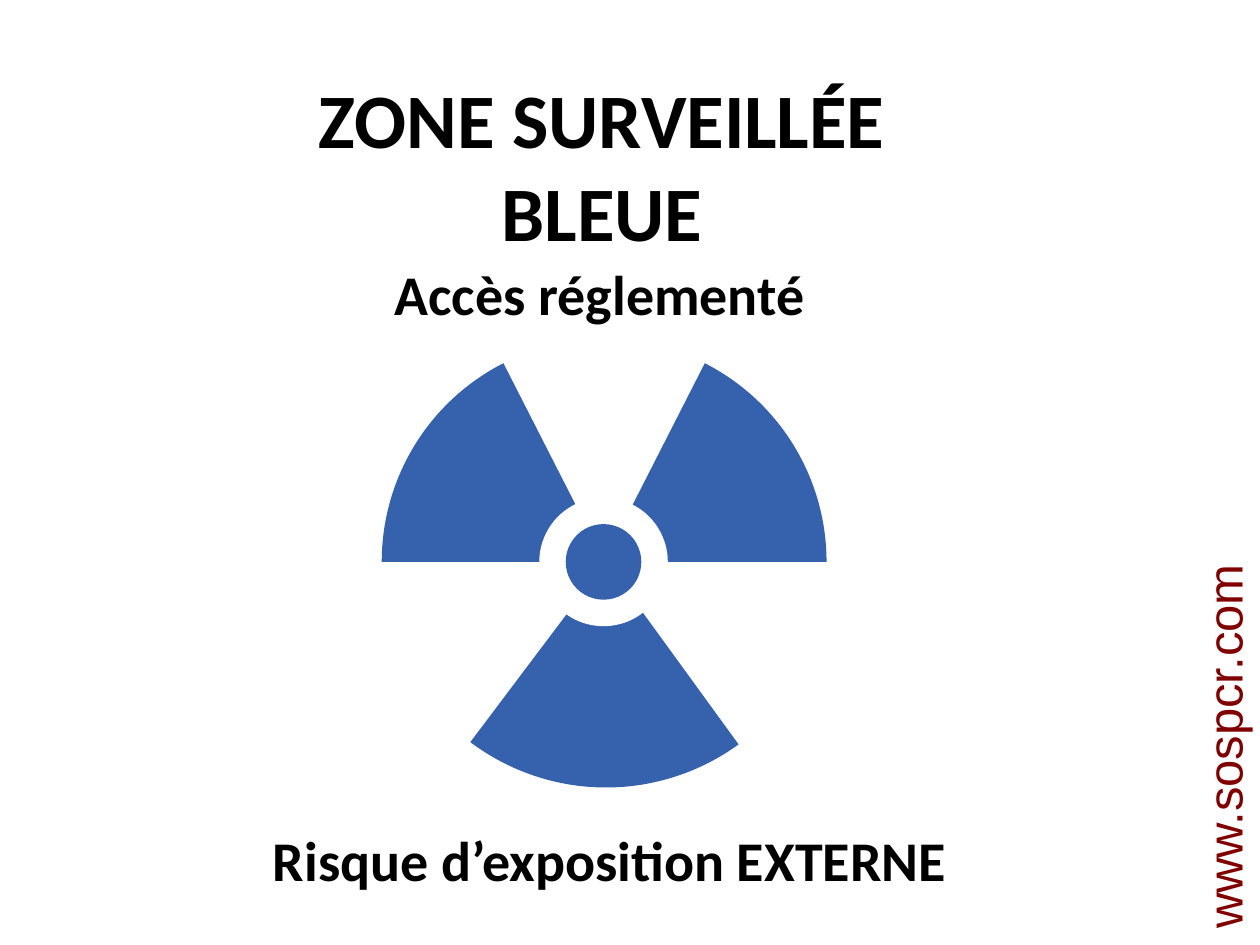
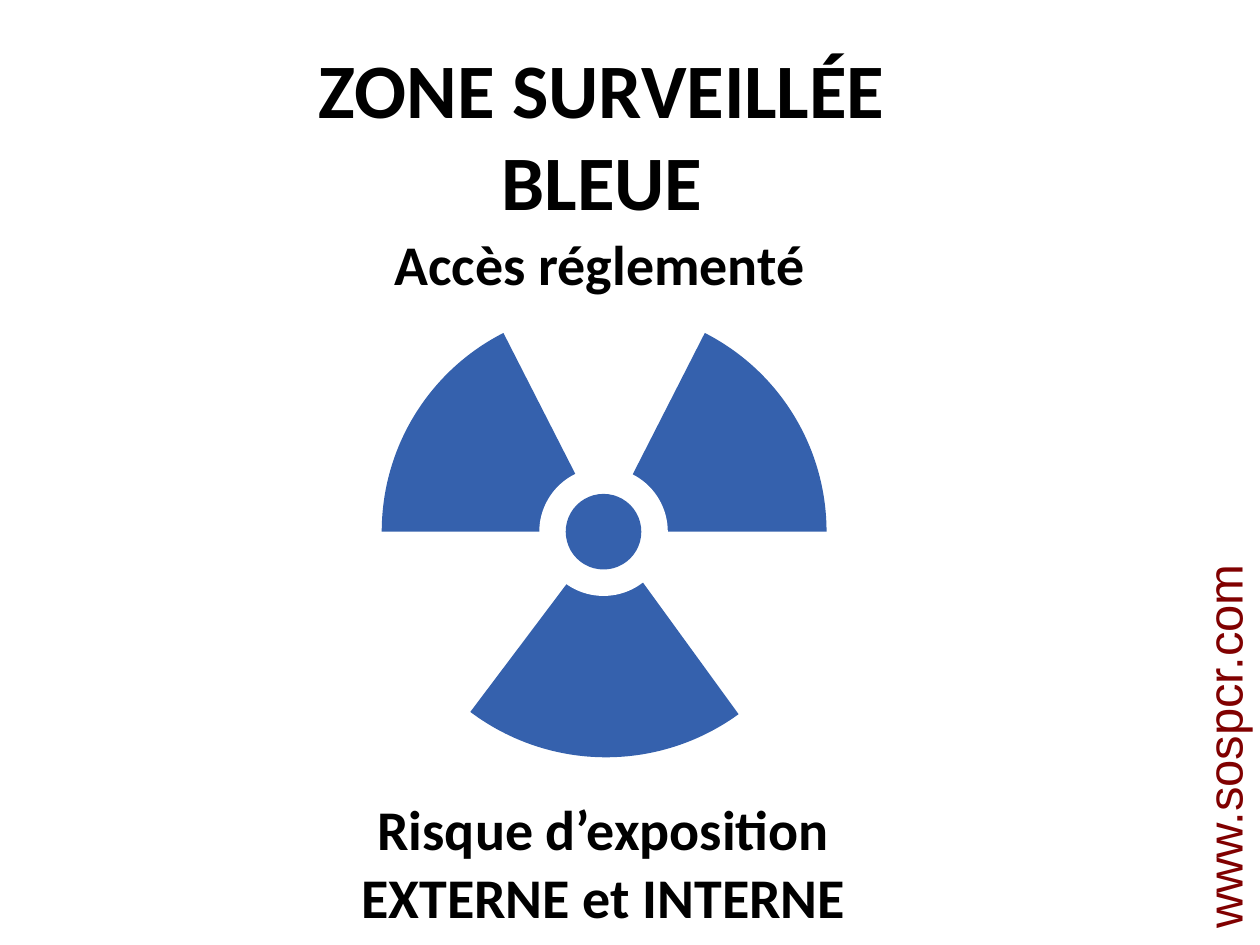
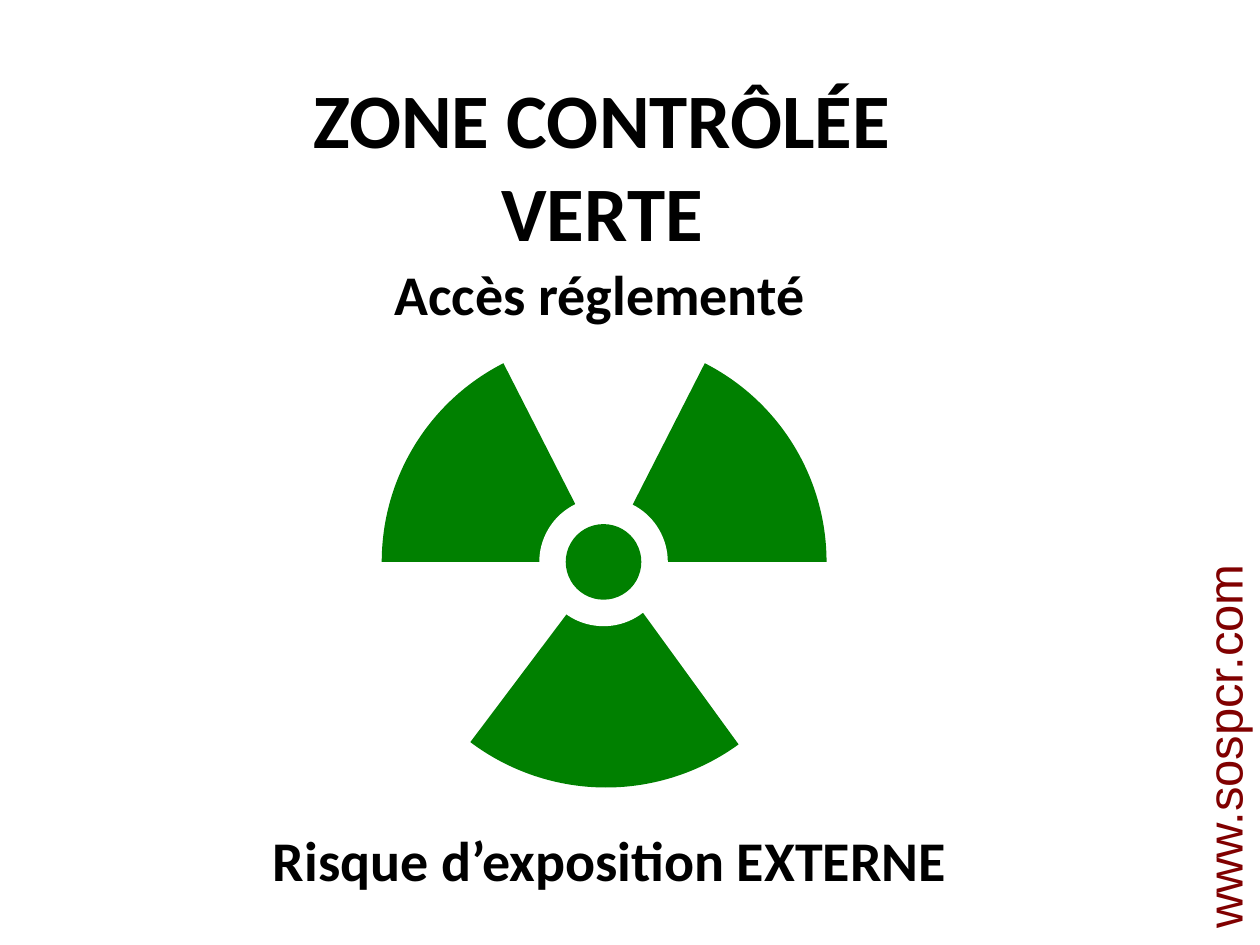
from dataclasses import dataclass
from math import cos, pi, radians, sin, tan

from lxml.etree import SubElement
from pptx import Presentation
from pptx.dml.color import RGBColor
from pptx.enum.shapes import MSO_SHAPE
from pptx.enum.text import MSO_ANCHOR, MSO_AUTO_SIZE, PP_ALIGN
from pptx.oxml.ns import qn
from pptx.util import Inches, Pt


@dataclass(frozen=True)
class Theme:
    blue: RGBColor = RGBColor(0x35, 0x61, 0xAD)
    green: RGBColor = RGBColor(0x00, 0x80, 0x00)
    white: RGBColor = RGBColor(0xFF, 0xFF, 0xFF)
    black: RGBColor = RGBColor(0x00, 0x00, 0x00)
    maroon: RGBColor = RGBColor(0x80, 0x00, 0x00)
    sign_font: str = "Calibri"
    website_font: str = "Arial"
    title_size: int = 44
    caption_size: int = 32
    website_size: int = 28


THEME = Theme()
WEBSITE = "www.sospcr.com"
ACCESS = "Accès réglementé"

# "rise" lifts the whole sign to make room for a second risk line.
SIGNS = [
    {"title": "ZONE SURVEILLÉE\nBLEUE", "color": THEME.blue, "rise": 0,
     "risk": "Risque d’exposition EXTERNE", "risk_box": (2.04, 6.5, 5.6, 0.64)},
    {"title": "ZONE SURVEILLÉE\nBLEUE", "color": THEME.blue, "rise": 0.24,
     "risk": "Risque d’exposition\nEXTERNE et INTERNE", "risk_box": (2.7, 6.5, 4.18, 1.18)},
    {"title": "ZONE CONTRÔLÉE\nVERTE", "color": THEME.green, "rise": 0,
     "risk": "Risque d’exposition EXTERNE", "risk_box": (2.04, 6.5, 5.6, 0.64)},
]

# Trefoil blades: apex x, radius, angles where the arc starts, is split and ends.
BLADES = [(4.8, 1.77, (180, 243)), (4.81, 1.79, (54, 90, 127)), (4.79, 1.77, (297, 360))]
HUB_X, HUB_Y = 4.79, 4.46
RING_RADIUS, HUB_RADIUS = 0.51, 0.3
UNITS_PER_INCH = 1000


def format_text(text_frame, text, size, font_name, color, bold=True):
    text_frame.text = text
    for paragraph in text_frame.paragraphs:
        paragraph.alignment = PP_ALIGN.CENTER
        for run in paragraph.runs:
            run.font.size = Pt(size)
            run.font.name = font_name
            run.font.bold = bold
            run.font.color.rgb = color


def add_label(slide, text, box, size=THEME.caption_size, font_name=THEME.sign_font,
              color=THEME.black, bold=True):
    label = slide.shapes.add_textbox(*map(Inches, box))
    label.text_frame.word_wrap = False
    label.text_frame.auto_size = MSO_AUTO_SIZE.SHAPE_TO_FIT_TEXT
    format_text(label.text_frame, text, size, font_name, color, bold)
    return label


def set_title(slide, text, top):
    title = slide.shapes.title
    title.left, title.top, title.width, title.height = map(Inches, (1.38, top, 6.8, 1.58))
    title.text_frame.word_wrap = True
    title.text_frame.auto_size = MSO_AUTO_SIZE.NONE
    title.text_frame.vertical_anchor = MSO_ANCHOR.TOP
    format_text(title.text_frame, text, THEME.title_size, THEME.sign_font, THEME.black)


def paint(shape, color):
    shape.shadow.inherit = False
    shape.fill.solid()
    shape.fill.fore_color.rgb = color
    shape.line.fill.background()


def arc_points(center_x, center_y, radius, angles):
    """Return the arc's start, then two control points and an end for each Bézier piece."""
    def point(angle, tangent=0):
        return (UNITS_PER_INCH * (center_x + radius * (cos(angle) - tangent * sin(angle))),
                UNITS_PER_INCH * (center_y + radius * (sin(angle) + tangent * cos(angle))))

    turns = [radians(angle) for angle in angles]
    points = [point(turns[0])]
    for start, end in zip(turns, turns[1:]):
        handle = 4 / 3 * tan((end - start) / 4)
        points += [point(start, handle), point(end, -handle), point(end)]
    return points


def curve_lines(shape):
    """Turn every three line segments after the first into one cubic curve."""
    lines = list(shape.element.iter(qn("a:lnTo")))[1:]
    for first in range(0, len(lines) - 2, 3):
        piece = lines[first:first + 3]
        curve = SubElement(piece[0].getparent(), qn("a:cubicBezTo"))
        piece[0].addprevious(curve)
        for line in piece:
            curve.append(line[0])
            line.getparent().remove(line)


def add_blade(shapes, apex_x, apex_y, radius, angles, color):
    builder = shapes.build_freeform(UNITS_PER_INCH * apex_x, UNITS_PER_INCH * apex_y,
                                    scale=Inches(1) / UNITS_PER_INCH)
    builder.add_line_segments(arc_points(apex_x, apex_y, radius, angles), close=True)
    blade = builder.convert_to_shape()
    curve_lines(blade)
    paint(blade, color)


def add_trefoil(slide, color, rise):
    center_y = HUB_Y - rise
    blades = slide.shapes.add_group_shape().shapes
    for apex_x, radius, angles in BLADES:
        add_blade(blades, apex_x, center_y, radius, angles, color)
    for radius, fill in ((RING_RADIUS, THEME.white), (HUB_RADIUS, color)):
        disc = slide.shapes.add_shape(MSO_SHAPE.OVAL, Inches(HUB_X - radius),
                                      Inches(center_y - radius),
                                      Inches(2 * radius), Inches(2 * radius))
        paint(disc, fill)


def add_sign(presentation, sign):
    slide = presentation.slides.add_slide(presentation.slide_layouts.get_by_name("Title Only"))
    rise = sign["rise"]
    set_title(slide, sign["title"], 0.52 - rise)
    add_trefoil(slide, sign["color"], rise)
    add_label(slide, ACCESS, (3.01, 2.01 - rise, 3.5, 0.64))
    left, top, width, height = sign["risk_box"]
    add_label(slide, sign["risk"], (left, top - rise, width, height))
    return slide


def add_website_to_master(presentation, slide):
    """Build the vertical address on a slide, then move it to the master all slides share."""
    website = add_label(slide, WEBSITE, (8.14, 5.64, 3.14, 0.57), THEME.website_size,
                        THEME.website_font, THEME.maroon, bold=False)
    website.rotation = 270
    presentation.slide_master.shapes.element.append(website.element)


def main():
    presentation = Presentation()
    presentation.slide_width, presentation.slide_height = Inches(10), Inches(7.5)
    slides = [add_sign(presentation, sign) for sign in SIGNS]
    add_website_to_master(presentation, slides[-1])
    presentation.save("out.pptx")


if __name__ == "__main__":
    main()
